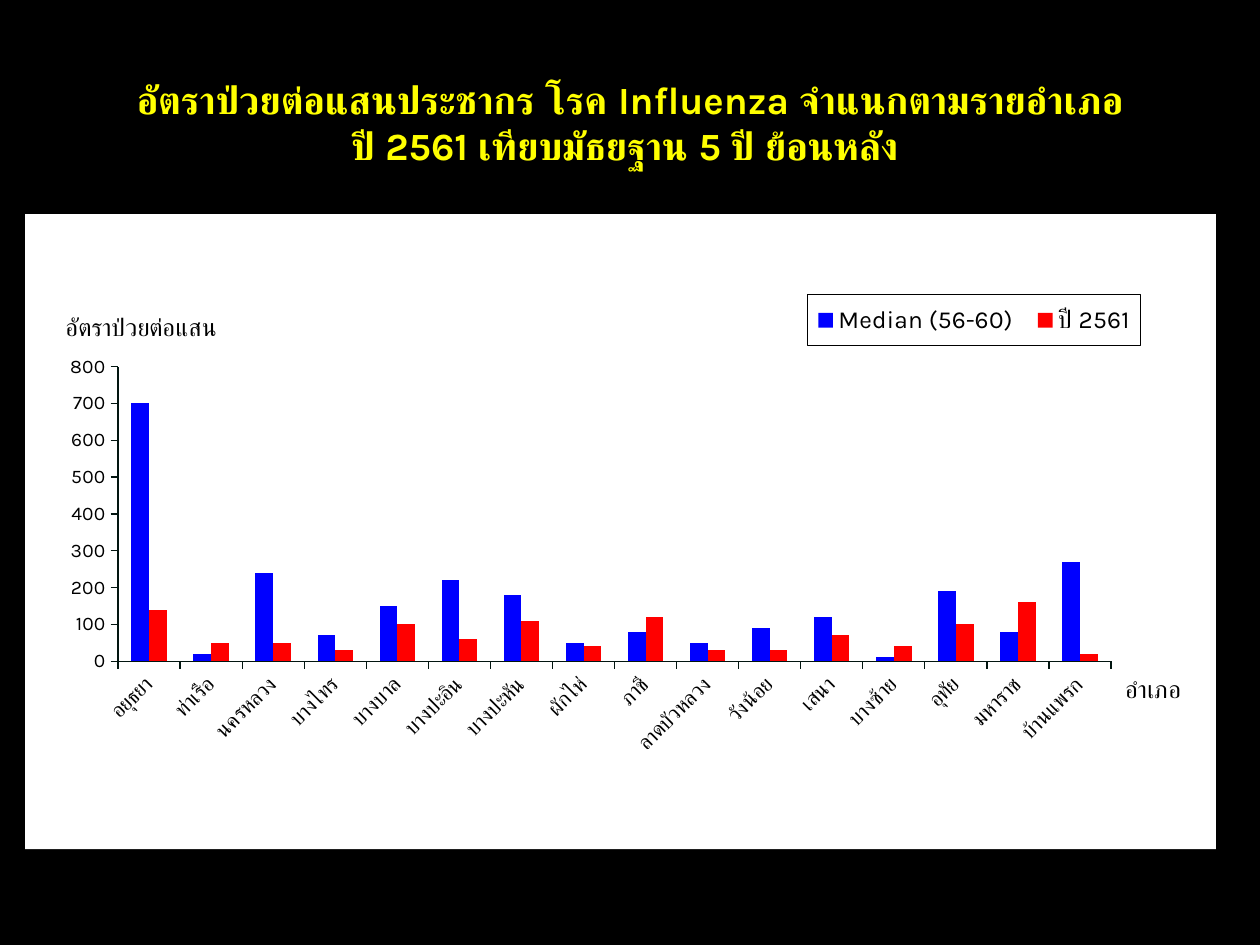
from lxml import etree
from pptx import Presentation
from pptx import util as u
from pptx.chart.data import CategoryChartData
from pptx.dml.color import RGBColor
from pptx.enum import chart as ch, text
from pptx.oxml import parse_xml
from pptx.oxml.ns import nsdecls, qn

Pt = u.Pt


def rgb(h):
    return RGBColor.from_string(h)


def place(el, inner=False, **pos):
    old = el.find(qn("c:layout"))
    if old is not None:
        el.remove(old)
    layout = etree.Element(qn("c:layout"))
    manual = etree.SubElement(layout, qn("c:manualLayout"))
    if inner:
        etree.SubElement(manual, qn("c:layoutTarget"), val="inner")
    for k in pos:
        if k in "xy":
            etree.SubElement(manual, qn(f"c:{k}Mode"), val="edge")
    for k, v in pos.items():
        etree.SubElement(manual, qn(f"c:{k}"), val=str(v))
    first = len(el) and el[0].tag in (qn("c:tx"), qn("c:legendPos"))
    el.insert(1 if first else 0, layout)


prs = Presentation()
prs.slide_width, prs.slide_height = Pt(720), Pt(540)
s = prs.slides.add_slide(prs.slide_layouts[5])
s.background.fill.solid()
s.background.fill.fore_color.rgb = rgb("000000")

sp = s.shapes.title
sp.left, sp.top, sp.width, sp.height = Pt(0), Pt(39.6), Pt(720), Pt(60.5)
tf = sp.text_frame
tf.word_wrap = True
tf.auto_size = text.MSO_AUTO_SIZE.SHAPE_TO_FIT_TEXT
tf.vertical_anchor = text.MSO_ANCHOR.MIDDLE
lines = [
    [("อัตราป่วยต่อแสนประชากร โรค Influenza จำแนกตามรายอำเภอ", "Karla")],
    [("ปี 2561 ", "Karla"), ("เทียบ", "Arial"), ("มัธยฐาน 5 ปี ย้อนหลัง ", "Karla")],
]
for i, line in enumerate(lines):
    p = tf.add_paragraph() if i else tf.paragraphs[0]
    p.alignment = text.PP_ALIGN.CENTER
    for words, font in line:
        r = p.add_run()
        r.text = words
        r.font.name, r.font.size, r.font.bold = font, Pt(22), True
        r.font.color.rgb = rgb("FFFF00")

data = CategoryChartData(number_format="0")
data.categories = ["อยุธยา", "ท่าเรือ", "นครหลวง", "บางไทร", "บางบาล", "บางปะอิน",
                   "บางปะหัน", "ผักไห่", "ภาชี", "ลาดบัวหลวง", "วังน้อย", "เสนา",
                   "บางซ้าย", "อุทัย", "มหาราช", "บ้านแพรก"]
data.add_series("Median (56-60) ", [700, 20, 240, 70, 150, 220, 180, 50,
                                    80, 50, 90, 120, 10, 190, 80, 270])
data.add_series("ปี 2561", [140, 50, 50, 30, 100, 60, 110, 40,
                            120, 30, 30, 70, 40, 100, 160, 20])
chart = s.shapes.add_chart(ch.XL_CHART_TYPE.COLUMN_CLUSTERED, Pt(14.4), Pt(122.4),
                           Pt(680.4), Pt(362.9), data).chart
chart.has_title = False
chart.font.name, chart.font.size = "Karla", Pt(14)
chart.font.color.rgb = rgb("000000")

plot = chart.plots[0]
plot.gap_width, plot.overlap, plot.vary_by_categories = 150, 0, False
for series, color in zip(plot.series, ["0000FF", "FF0000"]):
    series.format.fill.solid()
    series.format.fill.fore_color.rgb = rgb(color)
    series.invert_if_negative = False

cat, val = chart.category_axis, chart.value_axis
for axis, title, size, x, y in [(cat, "อำเภอ", 12, 0.92, 0.72),
                                (val, "อัตราป่วยต่อแสน", 11, 0.03, 0.15)]:
    axis.has_major_gridlines = False
    axis.major_tick_mark = ch.XL_TICK_MARK.OUTSIDE
    axis.tick_labels.font.size = Pt(size)
    axis.format.line.color.rgb = rgb("021510")
    axis.format.line.width = Pt(0.75)
    tf = axis.axis_title.text_frame
    tf.text = title
    f = tf.paragraphs[0].runs[0].font
    f.name, f.size, f.bold = "Karla", Pt(14), False
    f.color.rgb = rgb("000000")
    tf._txBody.bodyPr.set("rot", "0")
    tf._txBody.bodyPr.set("vert", "horz")
    place(axis._element.find(qn("c:title")), x=x, y=y)
cat._element.find(qn("c:txPr")).find(qn("a:bodyPr")).set("rot", "-2700000")
val.minimum_scale, val.maximum_scale, val.major_unit = 0, 800, 100
val.tick_labels.number_format = "0"
val.tick_labels.number_format_is_linked = False

chart.has_legend = True
legend = chart.legend
legend.position = ch.XL_LEGEND_POSITION.RIGHT
legend.include_in_layout = False
legend.font.size = Pt(14)
place(legend._element, x=0.657, y=0.127, w=0.28, h=0.08)
legend._element.find(qn("c:overlay")).addnext(parse_xml(
    f'<c:spPr {nsdecls("c", "a")}><a:solidFill><a:srgbClr val="FFFFFF"/></a:solidFill>'
    '<a:ln w="9525"><a:solidFill><a:srgbClr val="000000"/></a:solidFill></a:ln></c:spPr>'))

space = chart._chartSpace
place(space.chart.plotArea, inner=True, x=0.078, y=0.24, w=0.834, h=0.464)
space.chart.addnext(parse_xml(
    f'<c:spPr {nsdecls("c", "a")}><a:solidFill><a:srgbClr val="FFFFFF"/></a:solidFill>'
    '<a:ln><a:noFill/></a:ln></c:spPr>'))

prs.save("out.pptx")
